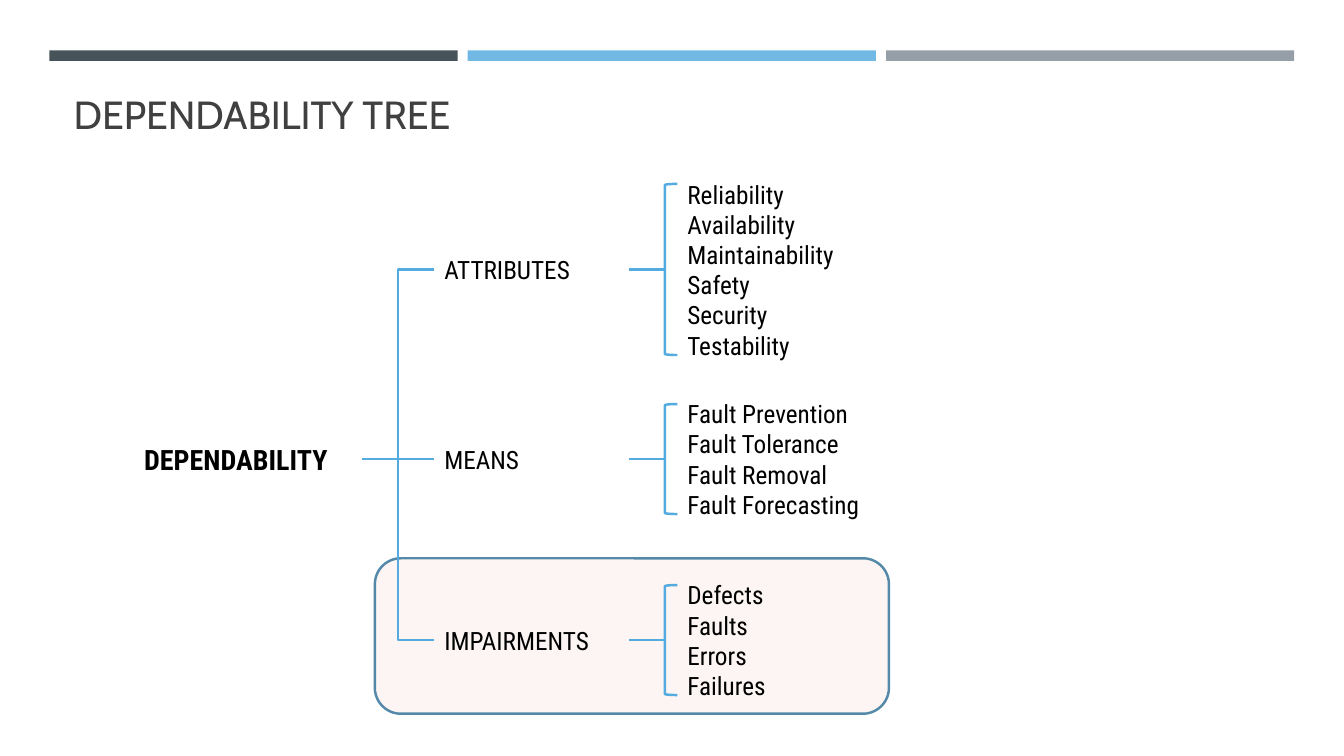
from dataclasses import dataclass

from lxml import etree
from pptx import Presentation
from pptx.dml.color import RGBColor
from pptx.enum.shapes import MSO_CONNECTOR, MSO_SHAPE
from pptx.enum.text import MSO_ANCHOR, PP_ALIGN
from pptx.oxml.ns import qn
from pptx.util import Pt

RECT, ROUND = MSO_SHAPE.RECTANGLE, MSO_SHAPE.ROUNDED_RECTANGLE
BRACKET = MSO_SHAPE.LEFT_BRACKET
STRAIGHT, ELBOW = MSO_CONNECTOR.STRAIGHT, MSO_CONNECTOR.ELBOW
LEFT, CENTER = PP_ALIGN.LEFT, PP_ALIGN.CENTER
TOP, MIDDLE = MSO_ANCHOR.TOP, MSO_ANCHOR.MIDDLE


@dataclass(frozen=True)
class Theme:
    """Colours, fonts and sizes of the slide."""
    bars: tuple = ("465359", "71B9E4", "969FA7")
    title: str = "404040"
    text: str = "000000"
    line: str = "54ABDF"
    panel: str = "FCECE8"
    panel_line: str = "5489A9"
    title_font: str = "Cabin"
    body_font: str = "Roboto Condensed"
    title_size: float = 28
    root_size: float = 20
    body_size: float = 18
    line_width: float = 1.75
    row: float = 21.84
    inset: float = 3.6


T = Theme()
BRANCHES = (
    ("ATTRIBUTES", 114, ("Reliability", "Availability", "Maintainability",
                         "Safety", "Security", "Testability")),
    ("MEANS", 249.4, ("Fault Prevention", "Fault Tolerance",
                      "Fault Removal", "Fault Forecasting")),
    ("IMPAIRMENTS", 378.7, ("Defects", "Faults", "Errors", "Failures")),
)


def rgb(color):
    """Turn a hex string into a colour."""
    return RGBColor.from_string(color)


def set_font(p, name, size, color, bold=False):
    """Format a whole paragraph."""
    p.font.name, p.font.size, p.font.bold = name, Pt(size), bold
    p.font.color.rgb = rgb(color)


def add_shape(s, kind, x, y, w, h, fill=None, line=None):
    """Add a shape with optional fill and outline."""
    sp = s.shapes.add_shape(kind, Pt(x), Pt(y), Pt(w), Pt(h))
    sp.shadow.inherit = False
    if fill:
        sp.fill.solid()
        sp.fill.fore_color.rgb = rgb(fill)
    else:
        sp.fill.background()
    if line:
        sp.line.color.rgb = rgb(line)
        sp.line.width = Pt(T.line_width)
    else:
        sp.line.fill.background()
    return sp


def add_line(s, kind, x1, y1, x2, y2):
    """Add a connector without shadow."""
    cn = s.shapes.add_connector(kind, Pt(x1), Pt(y1), Pt(x2), Pt(y2))
    cn.line.color.rgb = rgb(T.line)
    cn.line.width = Pt(T.line_width)
    etree.SubElement(cn._element.spPr, qn("a:effectLst"))


def add_text(s, x, mid, w, h, lines, size=T.body_size, bold=False, align=LEFT):
    """Add a text box centred vertically on mid."""
    tf = s.shapes.add_textbox(Pt(x), Pt(mid - h / 2), Pt(w), Pt(h)).text_frame
    tf.word_wrap, tf.vertical_anchor = True, MIDDLE
    tf.text = "\n".join(lines)
    for p in tf.paragraphs:
        p.alignment = align
        set_font(p, T.body_font, size, T.text, bold)


def add_bars(s, x, y, w, h, gap=7.2):
    """Draw the row of header bars."""
    bar_w = (w - gap * (len(T.bars) - 1)) / len(T.bars)
    for i, color in enumerate(T.bars):
        add_shape(s, RECT, x + i * (bar_w + gap), y, bar_w, h, fill=color)


def add_title(s, x, y, w, h, text):
    """Place and format the title placeholder."""
    sp = s.shapes.title
    sp.left, sp.top, sp.width, sp.height = Pt(x), Pt(y), Pt(w), Pt(h)
    tf = sp.text_frame
    tf.text, tf.vertical_anchor, tf.margin_top = text, TOP, Pt(7.2)
    p = tf.paragraphs[0]
    p.alignment = LEFT
    set_font(p, T.title_font, T.title_size, T.title)


def add_panel(s, x, y, w, h):
    """Draw the translucent highlight panel."""
    sp = add_shape(s, ROUND, x, y, w, h, T.panel, T.panel_line)
    color = sp._element.spPr.find(qn("a:solidFill"))[0]
    etree.SubElement(color, qn("a:alpha"), val="50000")


def add_branch(s, x, mid, label, items):
    """Draw a branch label, its bracket and its items."""
    label_w, stem, bracket_w = 139, 25.6, 9
    list_h = T.row * len(items) + 2 * T.inset
    bracket_x, bracket_h = x + label_w + stem, list_h - 16
    add_text(s, x, mid, label_w, 28.8, [label])
    add_text(s, bracket_x + bracket_w, mid, 168, list_h, items)
    add_line(s, STRAIGHT, x + label_w, mid, bracket_x, mid)
    add_shape(s, BRACKET, bracket_x, mid - bracket_h / 2, bracket_w, bracket_h,
              line=T.line)


def add_tree(s, x, y, w, h):
    """Draw the dependability tree inside its box."""
    root_w, link_w, panel_x, panel_h = 180, 51.8, 189.3, 111
    root_mid = y + BRANCHES[1][1]
    add_panel(s, x + panel_x, y + h - panel_h, w - panel_x, panel_h)
    add_text(s, x, root_mid, root_w, 31.7, ["DEPENDABILITY"],
             T.root_size, True, CENTER)
    for label, offset, items in BRANCHES:
        mid = y + offset
        add_line(s, ELBOW, x + root_w, root_mid, x + root_w + link_w, mid)
        add_branch(s, x + root_w + link_w, mid, label, items)


def main():
    """Build and save the slide."""
    prs = Presentation()
    prs.slide_width, prs.slide_height = Pt(960), Pt(540)
    s = prs.slides.add_slide(prs.slide_layouts[5])
    add_bars(s, 35.3, 36, 889.2, 7.5)
    add_title(s, 45.4, 57.6, 868.3, 77.8, "DEPENDABILITY TREE")
    add_tree(s, 78.5, 78.5, 556.5, 431.3)
    prs.save("out.pptx")


if __name__ == "__main__":
    main()
